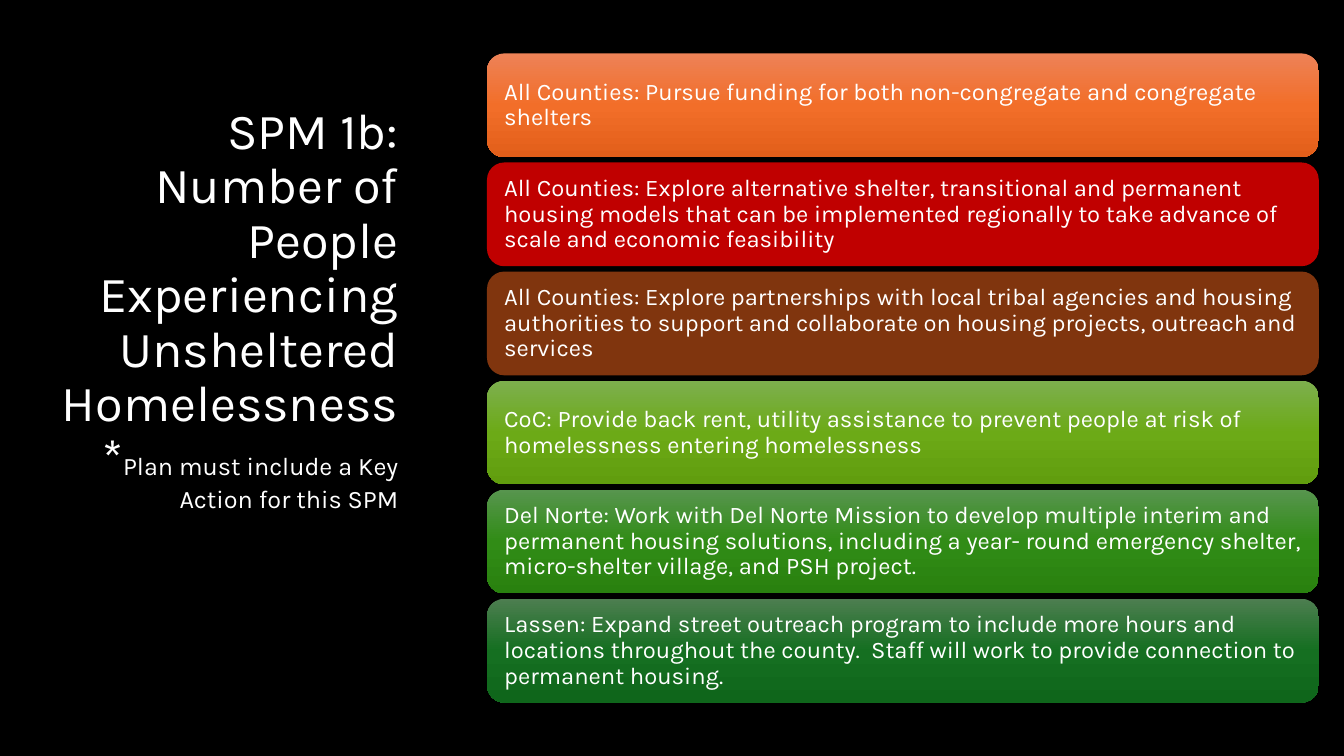
from copy import deepcopy

from pptx import Presentation
from pptx.dml.color import RGBColor
from pptx.enum.shapes import MSO_SHAPE
from pptx.enum.text import MSO_ANCHOR, PP_ALIGN
from pptx.util import Inches, Pt

COLORS = {
    "background": "000000",
    "text": "FFFFFF",
    "red": "C00000",
    "brown": "80350E",
    "orange": ("ED8257", "F26E29", "E25F1A"),
    "lime": ("7DAF4E", "6CAA17", "619D0E"),
    "green": ("57954E", "318C16", "29810F"),
    "forest": ("4D7E50", "156F21", "0F661B"),
}
FONT = "Karla"

# Each line of the title is a list of (text, size) runs
TITLE = [
    [("SPM 1b: Number of People Experiencing Unsheltered Homelessness", 36)],
    [("*", 36), ("Plan must include a Key Action for this SPM", 18)],
]

ACTIONS = [
    ("orange", "All Counties: Pursue funding for both non-congregate and congregate shelters"),
    ("red", "All Counties: Explore alternative shelter, transitional and permanent housing models "
            "that can be implemented regionally to take advance of scale and economic feasibility"),
    ("brown", "All Counties: Explore partnerships with local tribal agencies and housing authorities "
              "to support and collaborate on housing projects, outreach and services"),
    ("lime", "CoC: Provide back rent, utility assistance to prevent people at risk of homelessness "
             "entering homelessness"),
    ("green", "Del Norte: Work with Del Norte Mission to develop multiple interim and permanent "
              "housing solutions, including a year- round emergency shelter, micro-shelter village, "
              "and PSH project."),
    ("forest", "Lassen: Expand street outreach program to include more hours and locations throughout "
               "the county.  Staff will work to provide connection to permanent housing."),
]

CARD_LEFT, CARD_TOP, CARD_WIDTH, CARD_HEIGHT = 4.83, 0.53, 8.25, 1.03
CARD_STEP = 1.082


def write_text(box, lines, align=PP_ALIGN.LEFT, anchor=MSO_ANCHOR.MIDDLE, inset=(0.1, 0.05)):
    """Fill a box with one paragraph whose lines are lists of (text, size) runs."""
    frame = box.text_frame
    frame.word_wrap = True
    frame.vertical_anchor = anchor
    frame.margin_left = frame.margin_right = Inches(inset[0])
    frame.margin_top = frame.margin_bottom = Inches(inset[1])
    para = frame.paragraphs[0]
    para.alignment = align
    para.line_spacing = 0.9
    for index, line in enumerate(lines):
        if index:
            para.add_line_break()
        for text, size in line:
            span = para.add_run()
            span.text = text
            span.font.name = FONT
            span.font.size = Pt(size)
            span.font.color.rgb = RGBColor.from_string(COLORS["text"])


def paint(fill, color):
    """Fill with one colour, or with a top-to-bottom gradient of three."""
    if isinstance(color, str):
        fill.solid()
        fill.fore_color.rgb = RGBColor.from_string(color)
        return
    fill.gradient()
    fill.gradient_angle = 270
    first = fill.gradient_stops[0]._gs
    first.addnext(deepcopy(first))
    for stop, position, value in zip(fill.gradient_stops, (0, 0.5, 1), color):
        stop.position = position
        stop.color.rgb = RGBColor.from_string(value)


deck = Presentation()
deck.slide_width, deck.slide_height = Inches(13.33), Inches(7.5)
page = deck.slides.add_slide(deck.slide_layouts[6])
paint(page.background.fill, COLORS["background"])

# Title
title = page.shapes.add_textbox(Inches(0.39), Inches(1.21), Inches(3.66), Inches(3.94))
write_text(title, TITLE, align=PP_ALIGN.RIGHT, anchor=MSO_ANCHOR.BOTTOM)

# Action cards
for row, (color_name, action) in enumerate(ACTIONS):
    card = page.shapes.add_shape(
        MSO_SHAPE.ROUNDED_RECTANGLE, Inches(CARD_LEFT), Inches(CARD_TOP + row * CARD_STEP),
        Inches(CARD_WIDTH), Inches(CARD_HEIGHT))
    card.shadow.inherit = False
    card.line.fill.background()
    paint(card.fill, COLORS[color_name])
    write_text(card, [[(action, 17)]], inset=(0.12, 0.12))

deck.save("out.pptx")
